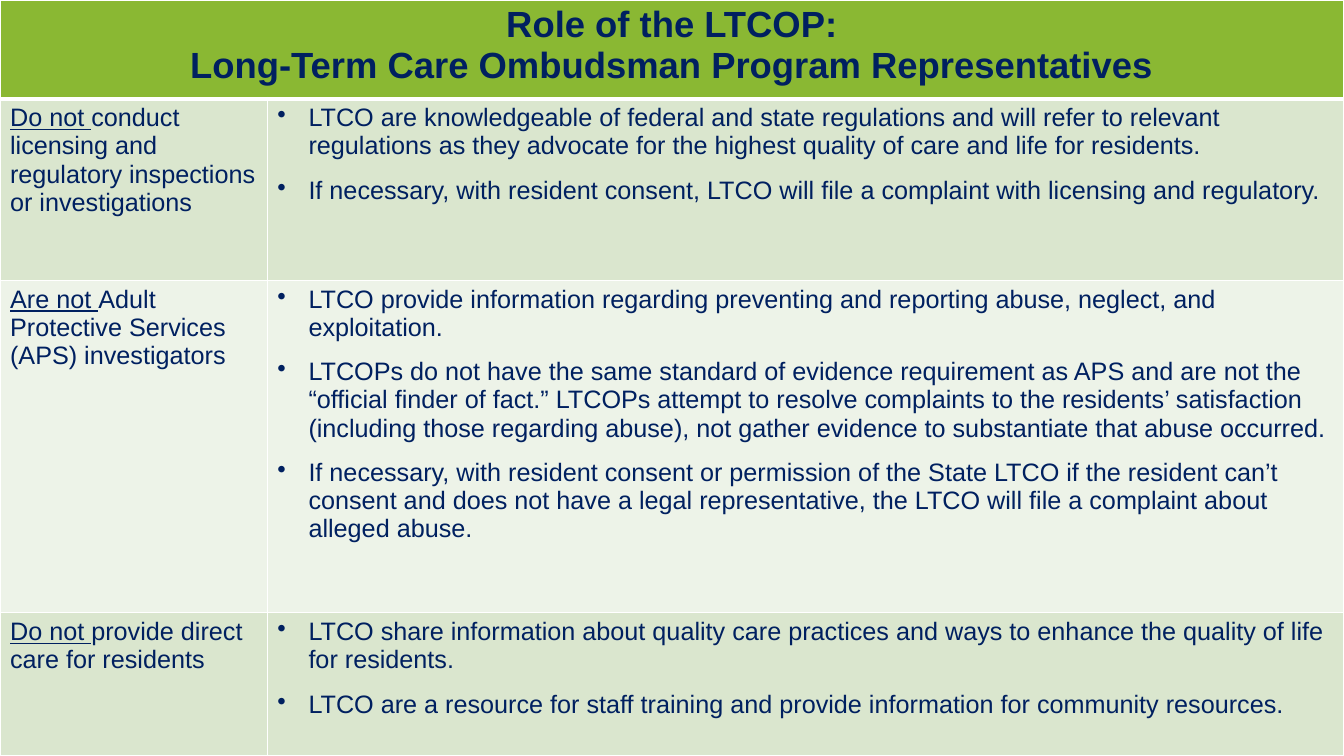
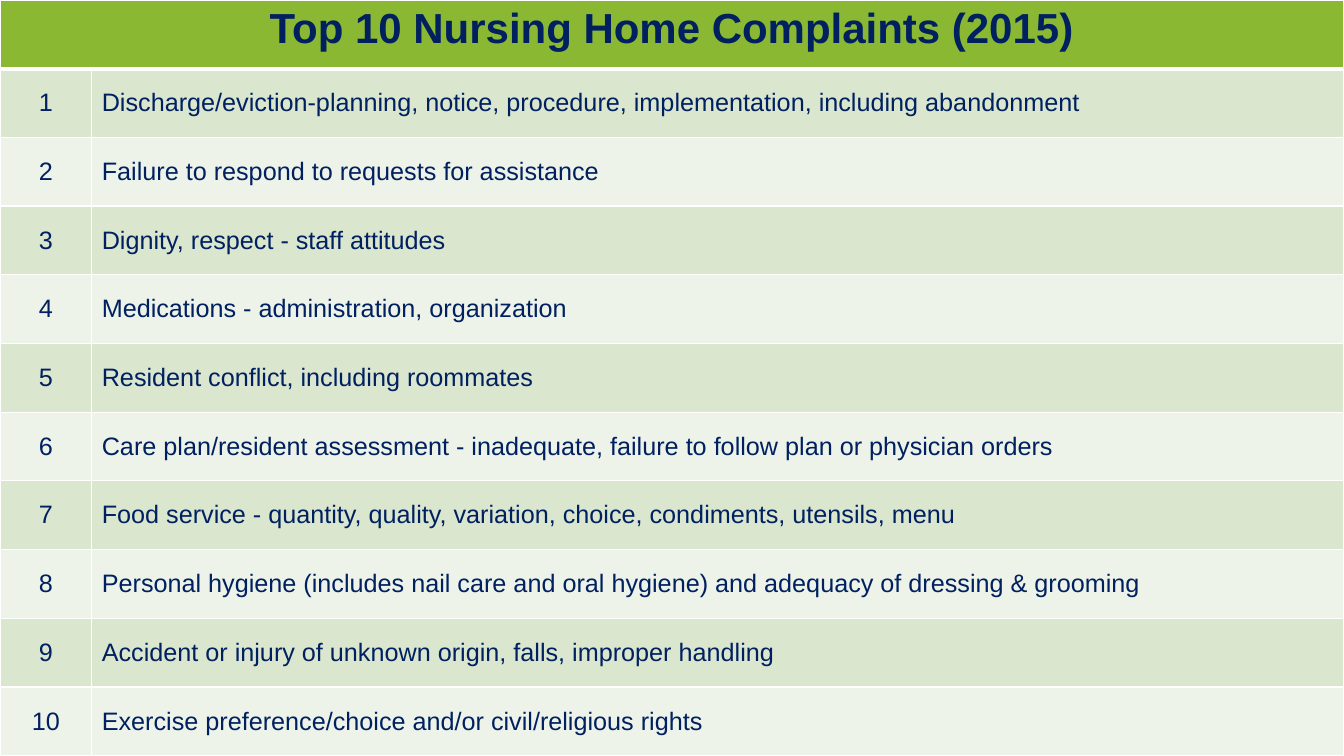
"""Builds two full-slide tables on long-term care ombudsman programs."""
from lxml import etree
from pptx import Presentation
from pptx.dml.color import RGBColor
from pptx.enum.text import MSO_ANCHOR, PP_ALIGN
from pptx.oxml.ns import qn
from pptx.util import Inches, Pt

CENTER, LEFT = PP_ALIGN.CENTER, PP_ALIGN.LEFT
TOP, MIDDLE = MSO_ANCHOR.TOP, MSO_ANCHOR.MIDDLE
NAVY = RGBColor(0x00, 0x20, 0x60)
GREEN = RGBColor(0x8A, 0xB8, 0x33)
WHITE = RGBColor(0xFF, 0xFF, 0xFF)
BANDS = (RGBColor(0xDA, 0xE6, 0xCE), RGBColor(0xED, 0xF3, 0xE8))
FONT = "Arial"
BODY_SIZE = 18
WIDTH, HEIGHT = 13.33, 7.5
BULLET_INDENT = Inches(0.31)
BULLET_GAP = Pt(11.5)

ROLE_TITLE = ["Role of the LTCOP:", "Long-Term Care Ombudsman Program Representatives"]
ROLE_HEIGHTS = [0.98, 1.8, 3.3, 1.42]
ROLES = [
    ("Do not ", "conduct licensing and regulatory inspections or investigations", [
        "LTCO are knowledgeable of federal and state regulations and will refer to relevant "
        "regulations as they advocate for the highest quality of care and life for residents.",
        "If necessary, with resident consent, LTCO will file a complaint with licensing and regulatory.",
    ]),
    ("Are not ", "Adult Protective Services (APS) investigators", [
        "LTCO provide information regarding preventing and reporting abuse, neglect, and exploitation.",
        "LTCOPs do not have the same standard of evidence requirement as APS and are not the "
        "“official finder of fact.” LTCOPs attempt to resolve complaints to the residents’ satisfaction "
        "(including those regarding abuse), not gather evidence to substantiate that abuse occurred.",
        "If necessary, with resident consent or permission of the State LTCO if the resident can’t "
        "consent and does not have a legal representative, the LTCO will file a complaint about "
        "alleged abuse.",
    ]),
    ("Do not ", "provide direct care for residents", [
        "LTCO share information about quality care practices and ways to enhance the quality of life "
        "for residents.",
        "LTCO are a resource for staff training and provide information for community resources.",
    ]),
]

COMPLAINTS_TITLE = ["Top 10 Nursing Home Complaints (2015)"]
COMPLAINTS = [
    "Discharge/eviction-planning, notice, procedure, implementation, including abandonment",
    "Failure to respond to requests for assistance",
    "Dignity, respect - staff attitudes",
    "Medications - administration, organization",
    "Resident conflict, including roommates",
    "Care plan/resident assessment - inadequate, failure to follow plan or physician orders",
    "Food service - quantity, quality, variation, choice, condiments, utensils, menu",
    "Personal hygiene (includes nail care and oral hygiene) and adequacy of dressing & grooming",
    "Accident or injury of unknown origin, falls, improper handling",
    "Exercise preference/choice and/or civil/religious rights",
]


def style_cell(cell, fill, bottom=1):
    """Fill a cell and give it white borders."""
    properties = cell._tc.get_or_add_tcPr()
    for side, points in (("L", 1), ("R", 1), ("T", 1), ("B", bottom)):
        line = etree.SubElement(properties, qn(f"a:ln{side}"), w=str(Pt(points)))
        solid = etree.SubElement(line, qn("a:solidFill"))
        etree.SubElement(solid, qn("a:srgbClr"), val=str(WHITE))
    cell.fill.solid()
    cell.fill.fore_color.rgb = fill


def add_bullet(paragraph):
    """Give a paragraph a hanging bullet."""
    properties = paragraph._p.get_or_add_pPr()
    properties.set("marL", str(BULLET_INDENT))
    properties.set("indent", str(-BULLET_INDENT))
    etree.SubElement(properties, qn("a:buChar"), char="•")


def write_cell(cell, paragraphs, size=BODY_SIZE, bold=False, align=LEFT, anchor=TOP, bullets=False):
    """Write paragraphs, each a list of (text, underlined) runs."""
    cell.vertical_anchor = anchor
    frame = cell.text_frame
    for index, runs in enumerate(paragraphs):
        paragraph = frame.add_paragraph() if index else frame.paragraphs[0]
        paragraph.alignment = align
        if bullets:
            add_bullet(paragraph)
            paragraph.space_before = BULLET_GAP if index else Pt(0)
        paragraph.font.name = FONT
        paragraph.font.size = Pt(size)
        paragraph.font.bold = bold
        paragraph.font.color.rgb = NAVY
        for text, underlined in runs:
            run = paragraph.add_run()
            run.text = text
            if underlined:
                run.font.underline = True


def plain(texts):
    """Turn texts into paragraphs of one plain run."""
    return [[(text, False)] for text in texts]


def add_table_slide(presentation, title, title_size, first_width, heights):
    """Add a slide filled by a titled, banded two-column table."""
    slide = presentation.slides.add_slide(presentation.slide_layouts[6])
    frame = slide.shapes.add_table(len(heights), 2, 0, 0, Inches(WIDTH), Inches(HEIGHT))
    table = frame.table
    for column, width in zip(table.columns, (first_width, WIDTH - first_width)):
        column.width = Inches(width)
    for index, (row, height) in enumerate(zip(table.rows, heights)):
        row.height = Inches(height)
        for cell in row.cells:
            if index:
                style_cell(cell, BANDS[(index - 1) % 2])
            else:
                style_cell(cell, GREEN, bottom=3)
    header = table.cell(0, 0)
    header.merge(table.cell(0, 1))
    write_cell(header, plain(title), title_size, bold=True, align=CENTER)
    return table


def main():
    """Build and save the presentation."""
    presentation = Presentation()
    presentation.slide_width = Inches(WIDTH)
    presentation.slide_height = Inches(HEIGHT)

    table = add_table_slide(presentation, ROLE_TITLE, 26, 2.65, ROLE_HEIGHTS)
    for row, (negation, duty, details) in enumerate(ROLES, 1):
        write_cell(table.cell(row, 0), [[(negation, True), (duty, False)]])
        write_cell(table.cell(row, 1), plain(details), bullets=True)

    row_count = len(COMPLAINTS) + 1
    table = add_table_slide(presentation, COMPLAINTS_TITLE, 30, 0.91, [HEIGHT / row_count] * row_count)
    for row, complaint in enumerate(COMPLAINTS, 1):
        write_cell(table.cell(row, 0), plain([str(row)]), align=CENTER, anchor=MIDDLE)
        write_cell(table.cell(row, 1), plain([complaint]), anchor=MIDDLE)

    presentation.save("out.pptx")


if __name__ == "__main__":
    main()
